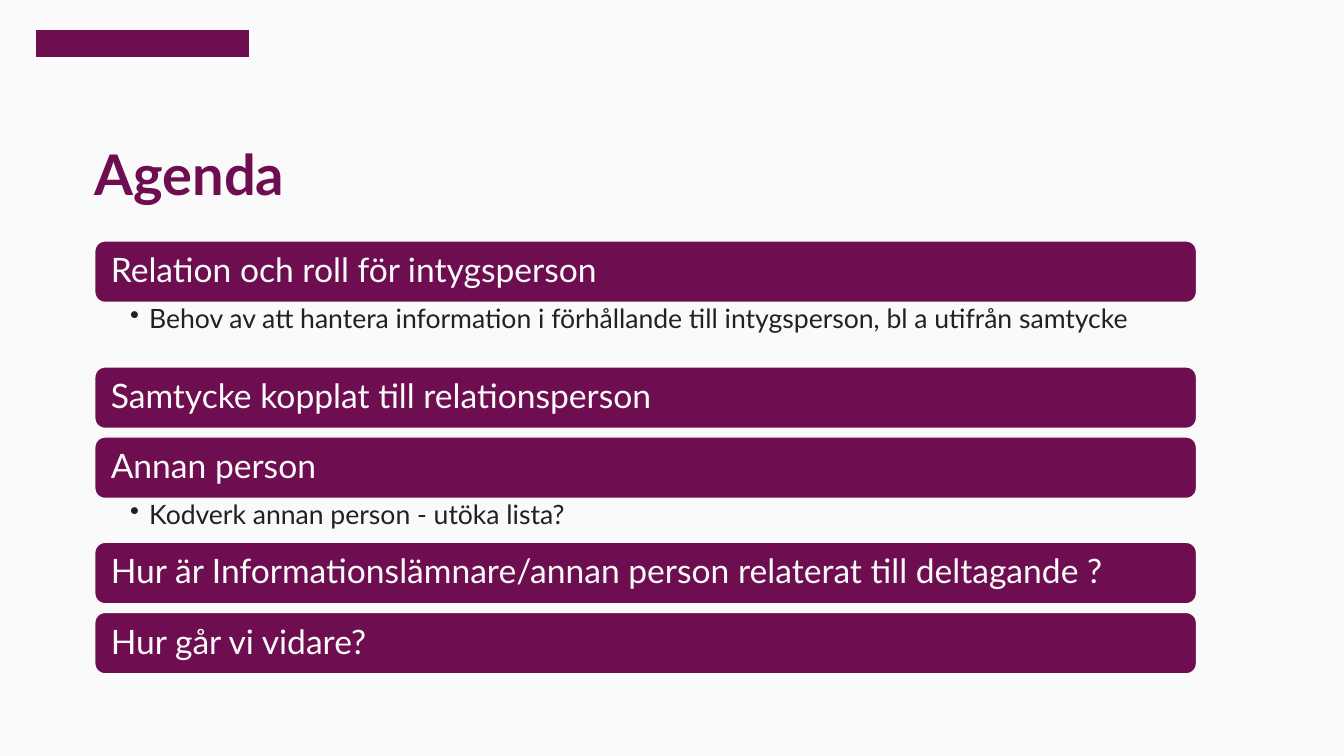
from lxml.etree import SubElement
from pptx import Presentation
from pptx.dml.color import RGBColor
from pptx.enum.shapes import MSO_SHAPE as Preset
from pptx.enum.text import MSO_ANCHOR as Anchor, PP_ALIGN as Align
from pptx.oxml.ns import qn
from pptx.util import Inches, Pt

PLUM, PAPER, INK = "6E0E50", "FAFAFA", "212121"
COLUMNS, ROWS = 40, 30
LEFT, WIDTH = 2.82, 32.79
BAR_HEIGHT, BAR_GAP = 2.44, 0.34

AGENDA = [
    ("Relation och roll för intygsperson",
     "Behov av att hantera information i förhållande till intygsperson, bl a utifrån samtycke", 2.56),
    ("Samtycke kopplat till relationsperson", None, BAR_GAP),
    ("Annan person", "Kodverk annan person - utöka lista?", 1.74),
    ("Hur är Informationslämnare/annan person relaterat till deltagande ?", None, BAR_GAP),
    ("Hur går vi vidare?", None, BAR_GAP),
]


def colour(hex_code):
    return RGBColor.from_string(hex_code)


def apply(target, values):
    for name, value in values.items():
        setattr(target, name, value)


def margins(left, top, right, bottom):
    return {"margin_left": Inches(left), "margin_top": Inches(top),
            "margin_right": Inches(right), "margin_bottom": Inches(bottom)}


class AgendaSlide:
    font = "Lato"
    title_format = {"size": Pt(40), "bold": True}
    topic_format = {"size": Pt(24)}
    note_format = {"size": Pt(19)}
    title_frame = {"vertical_anchor": Anchor.BOTTOM, **margins(0, 0, 0, 0)}
    topic_frame = {"vertical_anchor": Anchor.MIDDLE, **margins(0.13, 0.1, 0.13, 0.1)}
    note_frame = {"vertical_anchor": Anchor.TOP, **margins(0.35, 0.03, 0.19, 0.03)}

    def __init__(self, deck):
        self.column = deck.slide_width / COLUMNS
        self.row = deck.slide_height / ROWS
        self.slide = deck.slides.add_slide(deck.slide_layouts[6])
        backdrop = self.slide.background.fill
        backdrop.solid()
        backdrop.fore_color.rgb = colour(PAPER)

    def place(self, left, top, width, height):
        return (round(left * self.column), round(top * self.row),
                round(width * self.column), round(height * self.row))

    def letter(self, holder, wording, ink, frame_values, font_values):
        frame = holder.text_frame
        apply(frame, {"word_wrap": True, **frame_values})
        line = frame.paragraphs[0]
        apply(line, {"alignment": Align.LEFT, "line_spacing": 0.9})
        words = line.add_run()
        words.text = wording
        apply(words.font, {"name": self.font, **font_values})
        words.font.color.rgb = colour(ink)
        return line

    def block(self, preset, *area):
        panel = self.slide.shapes.add_shape(preset, *self.place(*area))
        panel.shadow.inherit = False
        panel.fill.solid()
        panel.fill.fore_color.rgb = colour(PLUM)
        panel.line.color.rgb = colour(PAPER)
        panel.line.width = Pt(1)
        return panel

    def title(self, wording, *area):
        heading = self.slide.shapes.add_textbox(*self.place(*area))
        self.letter(heading, wording, PLUM, self.title_frame, self.title_format)

    def topic(self, wording, top):
        bar = self.block(Preset.ROUNDED_RECTANGLE, LEFT, top, WIDTH, BAR_HEIGHT)
        self.letter(bar, wording, PAPER, self.topic_frame, self.topic_format)

    def note(self, wording, top, height):
        detail = self.slide.shapes.add_textbox(*self.place(LEFT, top, WIDTH, height))
        line = self.letter(detail, wording, INK, self.note_frame, self.note_format)
        line.level = 1
        properties = line._p.get_or_add_pPr()
        indent = Inches(0.19)
        properties.set("marL", str(indent))
        properties.set("indent", str(-indent))
        SubElement(properties, qn("a:buChar"), char="•")


def main():
    deck = Presentation()
    apply(deck, {"slide_width": Inches(13.33), "slide_height": Inches(7.5)})
    page = AgendaSlide(deck)
    page.block(Preset.RECTANGLE, 1.05, 1.16, 6.39, 1.12)
    page.title("Agenda", LEFT, 5.8, 21, 2.44)
    top = 9.56
    for topic, note, space_below in AGENDA:
        page.topic(topic, top)
        top += BAR_HEIGHT
        if note:
            page.note(note, top, space_below)
        top += space_below
    deck.save("out.pptx")


if __name__ == "__main__":
    main()
